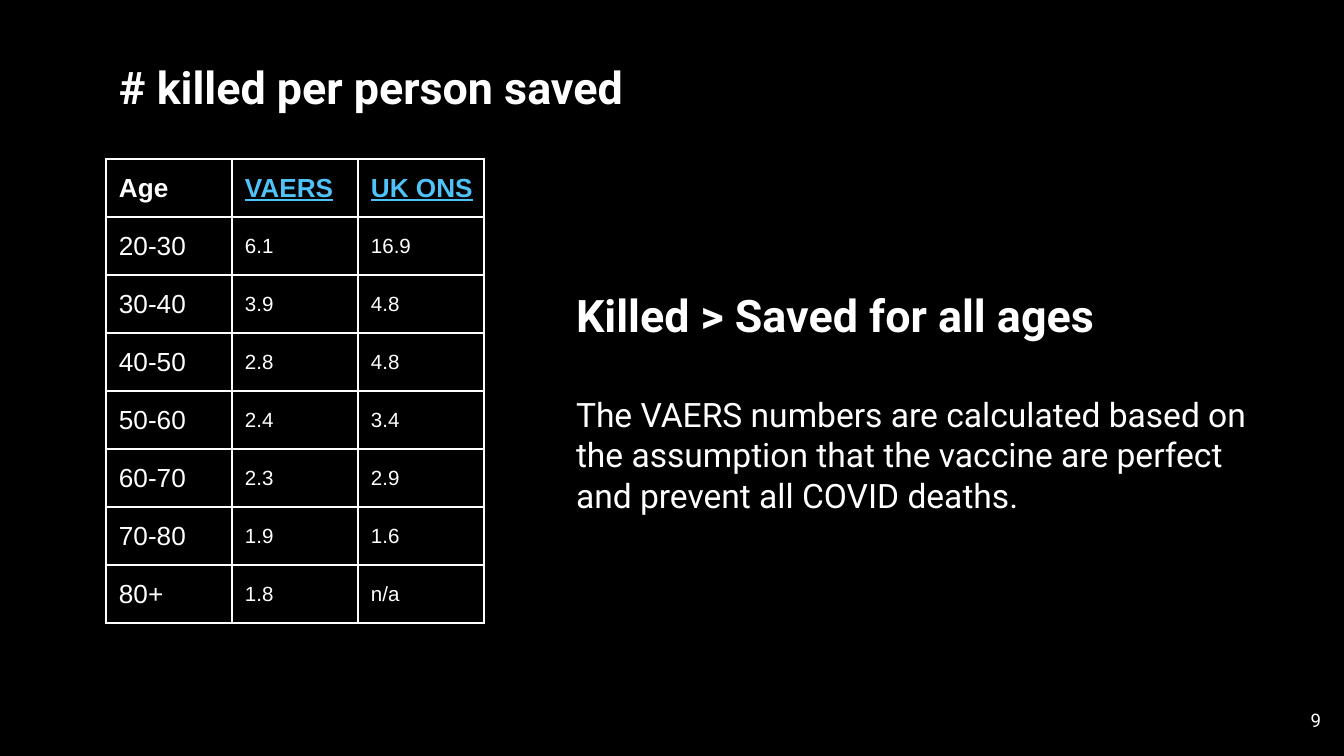
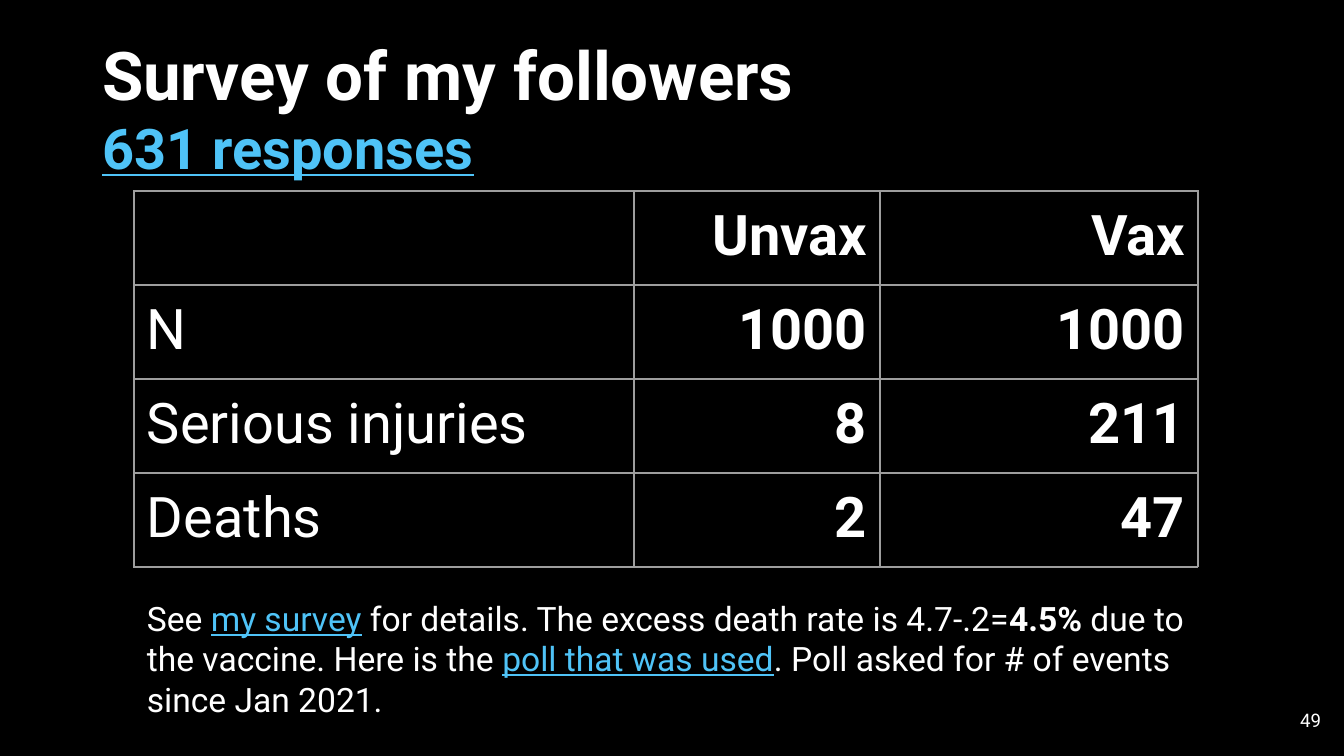
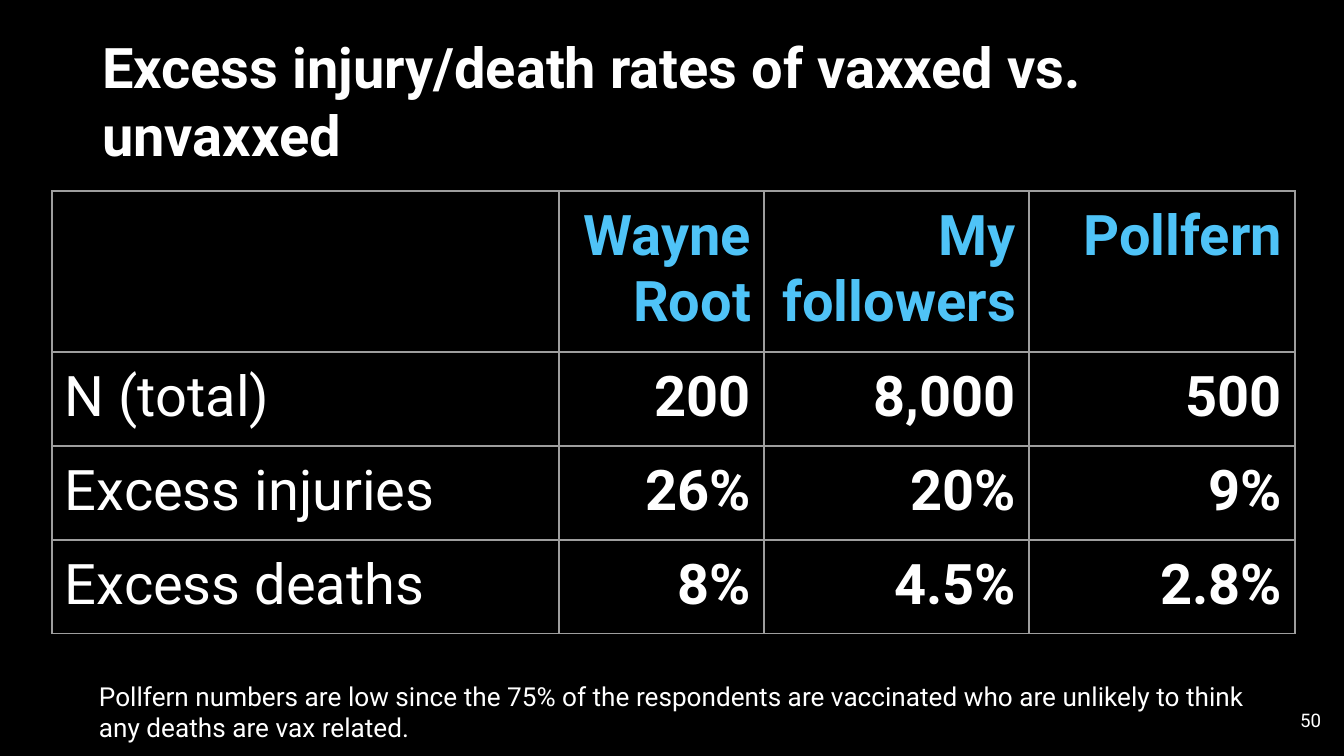
from lxml.etree import SubElement
from pptx import Presentation
from pptx.dml.color import RGBColor
from pptx.enum.text import MSO_ANCHOR, MSO_AUTO_SIZE, PP_ALIGN
from pptx.oxml.ns import qn
from pptx.util import Emu, Pt

COLORS = {"background": "000000", "text": "FFFFFF", "link": "4FC3F7", "grid": "9E9E9E"}
EMU_PER_PX = 914400 / 134.4
SLIDE_SIZE = (1344, 756)
INSET = 13
PAGE_NUMBER_BOX = (1253, 691, 81, 58)
LIGHT, HEAVY = 0.75, 1

BODY = {"name": "Roboto", "size": 18, "color": "text", "bold": False}
HEADING = {**BODY, "size": 24, "bold": True}
PAGE_NUMBER = {**BODY, "size": 10}
NOTE = {**BODY, "size": 14}
LINK = {"color": "link", "underline": True}
LARGE_LABEL = {**BODY, "size": 30}
LARGE_VALUE = {**LARGE_LABEL, "bold": True}
LARGE_TITLE = {**HEADING, "size": 36}
AGE = {**BODY, "name": "Arial", "size": 14}
AGE_HEADER = {**AGE, "bold": True}
RATE = {**AGE, "size": 11}

SLIDES = [
    {
        "number": 9,
        "title": {
            "box": (563, 204, 712, 395),
            "anchor": MSO_ANCHOR.MIDDLE,
            "second_space": 28,
            "paragraphs": [
                [("Killed > Saved for all ages", HEADING)],
                [("The VAERS numbers are calculated based on the assumption that "
                  "the vaccine are perfect and prevent all COVID deaths.", BODY)],
            ],
        },
        "text": {
            "box": (106, 47, 774, 113),
            "paragraphs": [[("# killed per person saved", HEADING)]],
        },
        "table": {
            "corner": (106, 159),
            "columns": [126] * 3,
            "rows": [58] * 8,
            "values": [
                ("Age", "VAERS", "UK ONS"),
                ("20-30", "6.1", "16.9"),
                ("30-40", "3.9", "4.8"),
                ("40-50", "2.8", "4.8"),
                ("50-60", "2.4", "3.4"),
                ("60-70", "2.3", "2.9"),
                ("70-80", "1.9", "1.6"),
                ("80+", "1.8", "n/a"),
            ],
            "corner_format": AGE_HEADER,
            "header_format": {**AGE_HEADER, **LINK},
            "label_format": AGE,
            "value_format": RATE,
            "align": PP_ALIGN.LEFT,
            "anchor": MSO_ANCHOR.MIDDLE,
            "vertical_inset": 0,
            "right_inset": 0,
            "border_color": "text",
            "inner_weight": HEAVY,
        },
    },
    {
        "number": 49,
        "title": {
            "box": (89, 20, 1129, 176),
            "paragraphs": [
                [("Survey of my followers", LARGE_TITLE)],
                [("631 responses", {**LARGE_VALUE, **LINK})],
            ],
        },
        "text": {
            "box": (134, 585, 1064, 149),
            "paragraphs": [[
                ("See ", BODY),
                ("my survey", {**BODY, **LINK}),
                (" for details. The excess death rate is 4.7-.2=", BODY),
                ("4.5%", {**BODY, "bold": True}),
                (" due to the vaccine. Here is the ", BODY),
                ("poll that was used", {**BODY, **LINK}),
                (". Poll asked for # of events since Jan 2021.", BODY),
            ]],
        },
        "table": {
            "corner": (134, 191),
            "columns": [500, 246, 318],
            "rows": [94] * 4,
            "values": [
                ("", "Unvax", "Vax"),
                ("N", "1000", "1000"),
                ("Serious injuries", "8", "211"),
                ("Deaths", "2", "47"),
            ],
            "header_format": LARGE_VALUE,
        },
    },
    {
        "number": 50,
        "title": {
            "box": (89, 20, 1129, 245),
            "paragraphs": [[("Excess injury/death rates of vaxxed vs. unvaxxed", LARGE_VALUE)]],
        },
        "text": {
            "box": (86, 667, 1210, 90),
            "paragraphs": [[
                ("Pollfern numbers are low since the 75% of the respondents are "
                 "vaccinated who are unlikely to think any deaths are vax related.", NOTE),
            ]],
        },
        "table": {
            "corner": (52, 191),
            "columns": [507, 205, 265, 266],
            "rows": [161, 94, 94, 94],
            "values": [
                ("", "Wayne Root", "My followers", "Pollfern"),
                ("N (total)", "200", "8,000", "500"),
                ("Excess injuries", "26%", "20%", "9%"),
                ("Excess deaths", "8%", "4.5%", "2.8%"),
            ],
            "header_format": {**LARGE_VALUE, "color": "link"},
        },
    },
]

TABLE_DEFAULTS = {
    "corner_format": LARGE_LABEL,
    "label_format": LARGE_LABEL,
    "value_format": LARGE_VALUE,
    "align": PP_ALIGN.RIGHT,
    "anchor": MSO_ANCHOR.TOP,
    "vertical_inset": INSET,
    "right_inset": INSET,
    "border_color": "grid",
    "inner_weight": LIGHT,
}


def px(length):
    return Emu(round(length * EMU_PER_PX))


def set_attributes(target, values):
    for name, value in values.items():
        setattr(target, name, value)


def write_runs(paragraph, runs, align):
    paragraph.alignment = align
    for text, format_values in runs:
        run = paragraph.add_run()
        run.text = text
        for name, value in format_values.items():
            if name == "color":
                run.font.color.rgb = RGBColor.from_string(COLORS[value])
            else:
                setattr(run.font, name, Pt(value) if name == "size" else value)


def fill_text(shape, content, align=PP_ALIGN.LEFT):
    set_attributes(shape, dict(zip(("left", "top", "width", "height"), map(px, content["box"]))))
    frame = shape.text_frame
    set_attributes(frame, {
        "word_wrap": True,
        "auto_size": MSO_AUTO_SIZE.NONE,
        "vertical_anchor": content.get("anchor", MSO_ANCHOR.TOP),
        "margin_left": px(INSET),
        "margin_top": px(INSET),
        "margin_right": px(INSET),
        "margin_bottom": px(INSET),
    })
    for index, runs in enumerate(content["paragraphs"]):
        paragraph = frame.add_paragraph() if index else frame.paragraphs[0]
        if index:
            paragraph.space_before = Pt(content.get("second_space", 0))
        write_runs(paragraph, runs, align)


def set_borders(cell, weights, color):
    properties = cell._tc.get_or_add_tcPr()
    for side, weight in weights.items():
        line = SubElement(properties, qn(f"a:ln{side}"), w=str(Pt(weight)))
        fill = SubElement(line, qn("a:solidFill"))
        SubElement(fill, qn("a:srgbClr"), val=COLORS[color])


def add_data_table(slide, content):
    content = {**TABLE_DEFAULTS, **content}
    columns, rows = content["columns"], content["rows"]
    table = slide.shapes.add_table(
        len(rows), len(columns), *map(px, content["corner"]), px(sum(columns)), px(sum(rows))
    ).table
    set_attributes(table, {"first_row": False, "horz_banding": False})
    for column, width in zip(table.columns, columns):
        column.width = px(width)
    for row, height in zip(table.rows, rows):
        row.height = px(height)
    for row_index, values in enumerate(content["values"]):
        for column_index, text in enumerate(values):
            cell = table.cell(row_index, column_index)
            in_body, in_values = row_index > 0, column_index > 0
            heavy_sides = {"L": in_body and in_values, "R": in_body,
                           "T": in_body and in_values, "B": in_values}
            set_borders(
                cell,
                {side: content["inner_weight"] if heavy else LIGHT
                 for side, heavy in heavy_sides.items()},
                content["border_color"],
            )
            cell.fill.background()
            set_attributes(cell, {
                "vertical_anchor": content["anchor"],
                "margin_left": px(INSET),
                "margin_right": px(content["right_inset"]),
                "margin_top": px(content["vertical_inset"]),
                "margin_bottom": px(content["vertical_inset"]),
            })
            if in_body:
                role = "value_format" if in_values else "label_format"
            else:
                role = "header_format" if in_values else "corner_format"
            if text:
                align = content["align"] if in_values else PP_ALIGN.LEFT
                write_runs(cell.text_frame.paragraphs[0], [(text, content[role])], align)


def add_text(slide, content, align=PP_ALIGN.LEFT):
    fill_text(slide.shapes.add_textbox(0, 0, 0, 0), content, align)


def main():
    presentation = Presentation()
    presentation.slide_width, presentation.slide_height = map(px, SLIDE_SIZE)
    background = presentation.slide_master.background.fill
    background.solid()
    background.fore_color.rgb = RGBColor.from_string(COLORS["background"])
    for content in SLIDES:
        slide = presentation.slides.add_slide(presentation.slide_layouts.get_by_name("Title Only"))
        fill_text(slide.shapes.title, content["title"])
        add_data_table(slide, content["table"])
        add_text(slide, content["text"])
        page_number = {
            "box": PAGE_NUMBER_BOX,
            "anchor": MSO_ANCHOR.MIDDLE,
            "paragraphs": [[(str(content["number"]), PAGE_NUMBER)]],
        }
        add_text(slide, page_number, PP_ALIGN.RIGHT)
    presentation.save("out.pptx")


if __name__ == "__main__":
    main()
